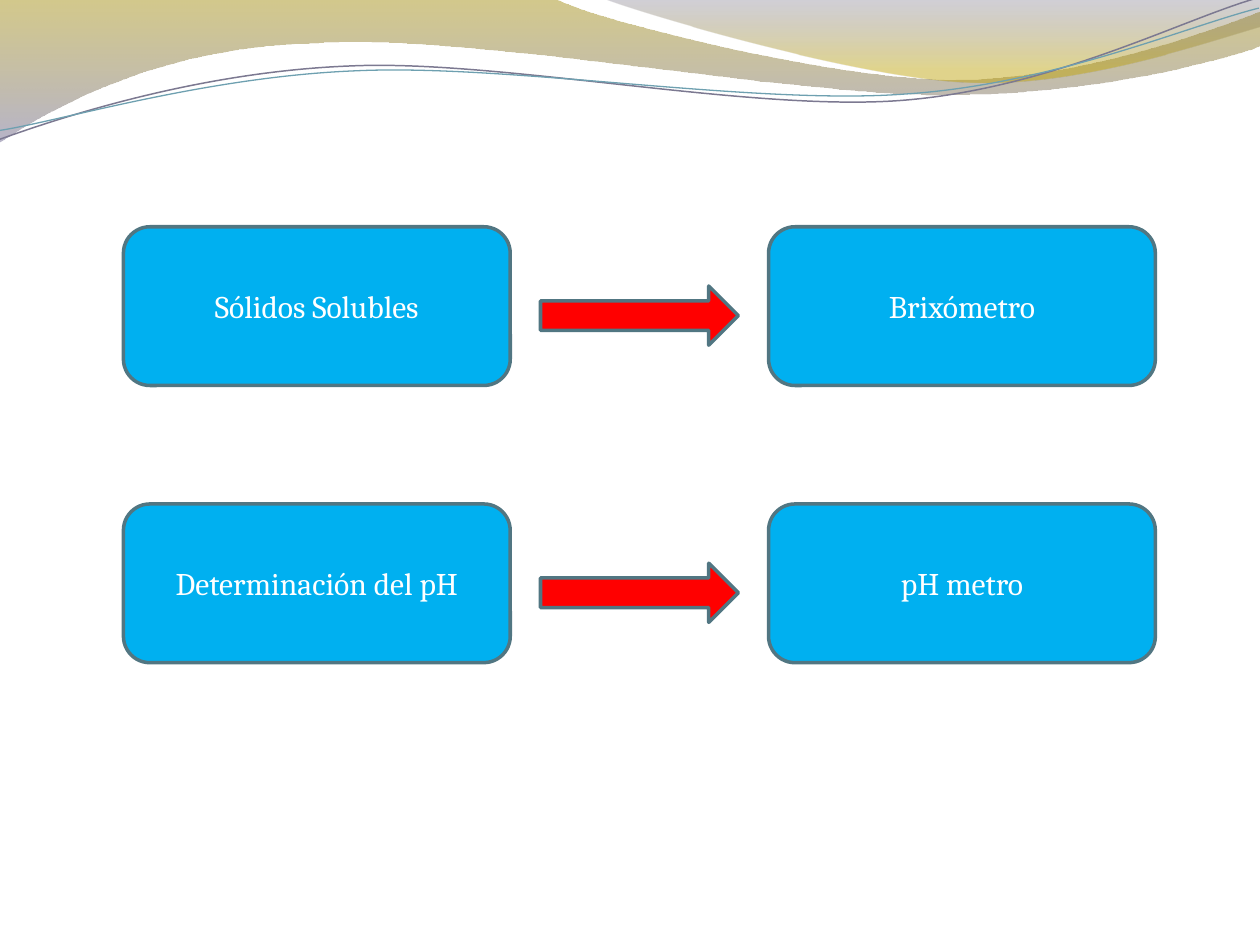
from lxml.etree import SubElement
from pptx import Presentation
from pptx.dml.color import RGBColor
from pptx.enum.shapes import MSO_SHAPE as Shape
from pptx.enum.text import MSO_ANCHOR as Anchor, PP_ALIGN as Align
from pptx.oxml.ns import qn
from pptx.util import Inches, Pt

WHITE = RGBColor(0xFF, 0xFF, 0xFF)
BLUE = RGBColor(0x00, 0xB0, 0xF0)
RED = RGBColor(0xFF, 0x00, 0x00)
OUTLINE = RGBColor(0x51, 0x76, 0x82)
OLIVE = RGBColor(0x9E, 0x87, 0x00)
MAUVE = RGBColor(0x7B, 0x76, 0x9C)
SLATE = RGBColor(0x66, 0x62, 0x7C)
GOLD = RGBColor(0xBD, 0xA1, 0x00)
LILAC = RGBColor(0x7C, 0x79, 0x91)
TEAL = RGBColor(0x6E, 0xA0, 0xB0)

deck = Presentation()
deck.slide_width, deck.slide_height = Inches(10), Inches(7.5)
page = deck.slides.add_slide(deck.slide_layouts[6])


def draw_path(shapes, start, segments, close):
    """Draw lines (x, y) and cubic curves (two controls and an end), in inches."""
    builder = shapes.build_freeform(Inches(start[0]), Inches(start[1]))
    for segment in segments:
        lengths = [Inches(value) for value in segment]
        builder.add_line_segments(list(zip(lengths[::2], lengths[1::2])), close=False)
    if close:
        builder.add_line_segments([], close=True)
    shape = builder.convert_to_shape()
    shape.shadow.inherit = False
    # Join the three points of each curve into one Bézier element
    nodes = iter(list(shape._element.spPr.iter(qn("a:lnTo"))))
    for segment in segments:
        node = next(nodes)
        if len(segment) == 6:
            node.tag = qn("a:cubicBezTo")
            for extra in (next(nodes), next(nodes)):
                node.append(extra[0])
                extra.getparent().remove(extra)
    return shape


# Translucent waves: start, segments, gradient stops (position, colour, opacity %)
waves = [
    ((0, 0),
     [(4.4, -0.01), (4.76, 0.17, 6.64, 0.63, 7.58, 0.63),
      (8.53, 0.63, 9.58, 0.26, 10, 0.09), (10.01, 0.36),
      (9.83, 0.44, 8.7, 0.76, 7.46, 0.75), (6.22, 0.75, 3.82, 0.28, 2.57, 0.34),
      (1.29, 0.36, 0.46, 0.83, -0.01, 1.13), (0, 0)],
     [(0, OLIVE, 45), (1, MAUVE, 55)]),
    ((4.79, -0.01),
     [(5.09, 0.11, 6.82, 0.62, 7.69, 0.65), (8.56, 0.69, 9.61, 0.32, 10, 0.21),
      (10, 0), (4.79, -0.01)],
     [(0, SLATE, 30), (0.8, GOLD, 45)]),
]
for start, segments, stops in waves:
    wave = draw_path(page.shapes, start, segments, close=True)
    wave.line.fill.background()
    wave.fill.gradient()
    wave.fill.gradient_angle = 270
    for stop, (position, color, opacity) in zip(wave.fill.gradient_stops, stops):
        stop.position = position
        stop.color.rgb = color
    for node, (position, color, opacity) in zip(wave._element.spPr.iter(qn("a:srgbClr")), stops):
        SubElement(node, qn("a:alpha"), val=str(opacity * 1000))

# Thin lines that follow the waves, laid out level and then tilted
TILT = -2.7
ripples = [
    ((-0.02, 0.87),
     [(0.47, 0.72, 1.58, 0.41, 2.78, 0.42), (3.96, 0.42, 5.91, 0.93, 7.12, 0.9),
      (8.32, 0.87, 9.4, 0.36, 10, 0.22)], LILAC, 0.85),
    ((-0.02, 0.8),
     [(0.46, 0.75, 1.64, 0.45, 2.83, 0.46), (4.03, 0.46, 5.96, 0.88, 7.16, 0.85),
      (8.35, 0.83, 9.42, 0.42, 10.01, 0.3)], TEAL, 0.75),
]
ripple_group = page.shapes.add_group_shape()
for start, segments, color, width in ripples:
    ripple = draw_path(ripple_group.shapes, start, segments, close=False)
    ripple.rotation = TILT
    ripple.fill.background()
    ripple.line.color.rgb = color
    ripple.line.width = Pt(width)


# Each row: measured property, arrow, instrument
BOX_SIZE, ARROW_SIZE = (3.07, 1.26), (1.57, 0.47)
FIRST_ROW, ROW_PITCH = 1.8, 2.2
rows = [("Sólidos Solubles", "Brixómetro"), ("Determinación del pH", "pH metro")]

for index, (measure, instrument) in enumerate(rows):
    top = FIRST_ROW + index * ROW_PITCH
    row_group = page.shapes.add_group_shape()
    for kind, left, drop, size, color, label in (
        (Shape.ROUNDED_RECTANGLE, 0.98, 0, BOX_SIZE, BLUE, measure),
        (Shape.RIGHT_ARROW, 4.29, 0.47, ARROW_SIZE, RED, None),
        (Shape.ROUNDED_RECTANGLE, 6.1, 0, BOX_SIZE, BLUE, instrument),
    ):
        box = row_group.shapes.add_shape(kind, *map(Inches, (left, top + drop, *size)))
        box.shadow.inherit = False
        box.fill.solid()
        box.fill.fore_color.rgb = color
        box.line.color.rgb = OUTLINE
        box.line.width = Pt(2)
        if label is None:
            continue
        box.text_frame.word_wrap = True
        box.text_frame.vertical_anchor = Anchor.MIDDLE
        para = box.text_frame.paragraphs[0]
        para.alignment = Align.CENTER
        span = para.add_run()
        span.text = label
        span.font.name = "Cambria"
        span.font.size = Pt(18)
        span.font.color.rgb = WHITE

deck.save("out.pptx")
